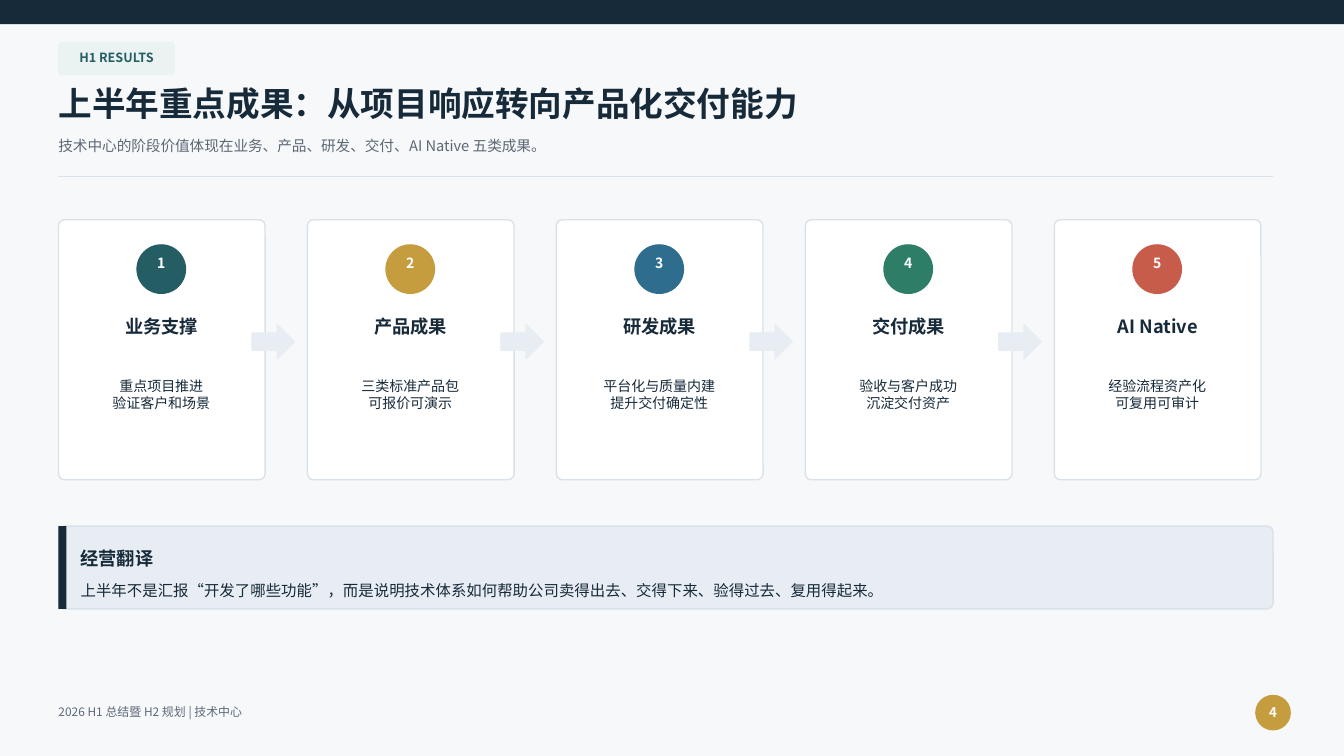
from dataclasses import dataclass

import pptx
import pptx.dml.color
import pptx.enum.shapes
import pptx.enum.text
import pptx.oxml
import pptx.oxml.ns
import pptx.util

Pt = pptx.util.Pt
SHAPE = pptx.enum.shapes.MSO_SHAPE
ALIGN = pptx.enum.text.PP_ALIGN
ANCHOR = pptx.enum.text.MSO_ANCHOR


@dataclass(frozen=True)
class Theme:
    font: str = "Noto Sans CJK SC"
    page: str = "F7F8FA"
    navy: str = "172A3A"
    teal: str = "245D63"
    mint: str = "EAF3F1"
    gold: str = "C59D3F"
    blue: str = "2E6D8E"
    green: str = "2D7D67"
    red: str = "C75C4A"
    grey: str = "5D6875"
    border: str = "D9E2E8"
    panel: str = "E7EDF2"
    white: str = "FFFFFF"
    title: float = 24
    heading: float = 13
    callout: float = 11
    subtitle: float = 10.5
    body: float = 10
    page_number: float = 9.5
    tag: float = 9
    footer: float = 8.5


@dataclass(frozen=True)
class Box:
    left: float
    top: float
    width: float
    height: float


@dataclass(frozen=True)
class Result:
    title: str
    lines: str
    color: str


THEME = Theme()
MARGIN = 41.76
CONTENT_WIDTH = 867.6
CARD_TOP, CARD_WIDTH, CARD_HEIGHT, CARD_PITCH = 156.96, 147.6, 185.76, 177.84
CALLOUT_TOP, CALLOUT_HEIGHT = 375.84, 59.04

RESULTS = [
    Result("业务支撑", "重点项目推进\n验证客户和场景", THEME.teal),
    Result("产品成果", "三类标准产品包\n可报价可演示", THEME.gold),
    Result("研发成果", "平台化与质量内建\n提升交付确定性", THEME.blue),
    Result("交付成果", "验收与客户成功\n沉淀交付资产", THEME.green),
    Result("AI Native", "经验流程资产化\n可复用可审计", THEME.red),
]


def rgb(color: str) -> pptx.dml.color.RGBColor:
    return pptx.dml.color.RGBColor.from_string(color)


def place(sp, box: Box) -> None:
    sp.left, sp.top = Pt(box.left), Pt(box.top)
    sp.width, sp.height = Pt(box.width), Pt(box.height)


def write(sp, text: str, size: float, color: str, bold: bool = False,
          align=ALIGN.LEFT, anchor=ANCHOR.MIDDLE) -> None:
    tf = sp.text_frame
    tf.text = text
    tf.word_wrap = True
    tf.auto_size = pptx.enum.text.MSO_AUTO_SIZE.NONE
    tf.vertical_anchor = anchor
    tf.margin_left = tf.margin_right = tf.margin_top = tf.margin_bottom = 0
    for p in tf.paragraphs:
        p.alignment = align
        for r in p.runs:
            r.font.size = Pt(size)
            r.font.bold = bold
            r.font.name = THEME.font
            r.font.color.rgb = rgb(color)
            # East Asian characters take their own typeface element
            ea = pptx.oxml.parse_xml(
                f'<a:ea {pptx.oxml.ns.nsdecls("a")} typeface="{THEME.font}"/>')
            r.font._element.append(ea)


def add_text(s, box: Box, text: str, size: float, color: str,
             bold: bool = False, align=ALIGN.LEFT, anchor=ANCHOR.MIDDLE) -> None:
    sp = s.shapes.add_textbox(0, 0, 0, 0)
    place(sp, box)
    write(sp, text, size, color, bold, align, anchor)


def add_shape(s, kind, box: Box, fill: str, line: str | None = None,
              radius: float | None = None) -> None:
    sp = s.shapes.add_shape(kind, 0, 0, 0, 0)
    place(sp, box)
    sp.shadow.inherit = False
    sp.fill.solid()
    sp.fill.fore_color.rgb = rgb(fill)
    if line is None:
        sp.line.fill.background()
    else:
        sp.line.color.rgb = rgb(line)
        sp.line.width = Pt(1)
    if radius is not None:
        # corner radius as a share of the shorter side
        sp.adjustments[0] = radius / min(box.width, box.height)


def add_rule(s, left: float, top: float, width: float) -> None:
    cn = s.shapes.add_connector(pptx.enum.shapes.MSO_CONNECTOR.STRAIGHT,
                                Pt(left), Pt(top), Pt(left + width), Pt(top))
    cn.line.color.rgb = rgb(THEME.border)
    cn.line.width = Pt(1)
    cn._element.spPr.append(
        pptx.oxml.parse_xml(f'<a:effectLst {pptx.oxml.ns.nsdecls("a")}/>'))


def add_header(s) -> None:
    add_shape(s, SHAPE.RECTANGLE, Box(0, 0, 960, 17.28), THEME.navy)
    add_shape(s, SHAPE.ROUNDED_RECTANGLE, Box(MARGIN, 30.24, 82.8, 23.04),
              THEME.mint, THEME.mint, radius=2.88)
    add_text(s, Box(48.96, 33.12, 68.4, 15.84), "H1 RESULTS",
             THEME.tag, THEME.teal, True, ALIGN.CENTER)
    place(s.shapes.title, Box(MARGIN, 56.16, 561.6, 34.56))
    write(s.shapes.title, "上半年重点成果：从项目响应转向产品化交付能力",
          THEME.title, THEME.navy, True)
    add_text(s, Box(MARGIN, 91.44, 777.6, 24.48),
             "技术中心的阶段价值体现在业务、产品、研发、交付、AI Native 五类成果。",
             THEME.subtitle, THEME.grey)
    add_rule(s, MARGIN, 126, CONTENT_WIDTH)


def add_card(s, index: int, result: Result) -> None:
    left = MARGIN + index * CARD_PITCH
    add_shape(s, SHAPE.ROUNDED_RECTANGLE,
              Box(left, CARD_TOP, CARD_WIDTH, CARD_HEIGHT),
              THEME.white, THEME.border, radius=4.32)
    add_shape(s, SHAPE.OVAL, Box(left + 56.16, 174.96, 34.56, 34.56),
              result.color, result.color)
    add_text(s, Box(left + 56.16, 181.44, 34.56, 12.96), str(index + 1),
             THEME.body, THEME.white, True, ALIGN.CENTER)
    add_text(s, Box(left + 14.4, 223.2, 118.8, 20.16), result.title,
             THEME.heading, THEME.navy, True, ALIGN.CENTER)
    add_text(s, Box(left + 15.84, 260.64, 115.2, 41.76), result.lines,
             THEME.body, THEME.navy, align=ALIGN.CENTER)
    if index < len(RESULTS) - 1:
        add_shape(s, SHAPE.RIGHT_ARROW, Box(left + 138.24, 231.84, 30.24, 24.48),
                  THEME.panel, THEME.panel)


def add_callout(s) -> None:
    add_shape(s, SHAPE.ROUNDED_RECTANGLE,
              Box(MARGIN, CALLOUT_TOP, CONTENT_WIDTH, CALLOUT_HEIGHT),
              THEME.panel, THEME.border, radius=4.32)
    add_shape(s, SHAPE.RECTANGLE,
              Box(MARGIN, CALLOUT_TOP, 5.76, CALLOUT_HEIGHT), THEME.navy)
    add_text(s, Box(57.6, 388.8, 842, 20.16), "经营翻译",
             THEME.heading, THEME.navy, True)
    add_text(s, Box(57.6, 415.44, 842, 10.08),
             "上半年不是汇报“开发了哪些功能”，而是说明技术体系如何帮助公司"
             "卖得出去、交得下来、验得过去、复用得起来。",
             THEME.callout, THEME.navy, anchor=ANCHOR.TOP)


def add_footer(s) -> None:
    add_text(s, Box(MARGIN, 500.4, 230.4, 15.84),
             "2026 H1 总结暨 H2 规划 | 技术中心", THEME.footer, THEME.grey)
    badge = Box(897.12, 496.8, 24.48, 24.48)
    add_shape(s, SHAPE.OVAL, badge, THEME.gold, THEME.gold)
    add_text(s, badge, "4", THEME.page_number, THEME.white, True, ALIGN.CENTER)


def main() -> None:
    prs = pptx.Presentation()
    prs.slide_width, prs.slide_height = Pt(960), Pt(540)
    s = prs.slides.add_slide(prs.slide_layouts.get_by_name("Title Only"))
    s.background.fill.solid()
    s.background.fill.fore_color.rgb = rgb(THEME.page)

    add_header(s)
    for index, result in enumerate(RESULTS):
        add_card(s, index, result)
    add_callout(s)
    add_footer(s)
    prs.save("out.pptx")


if __name__ == "__main__":
    main()
